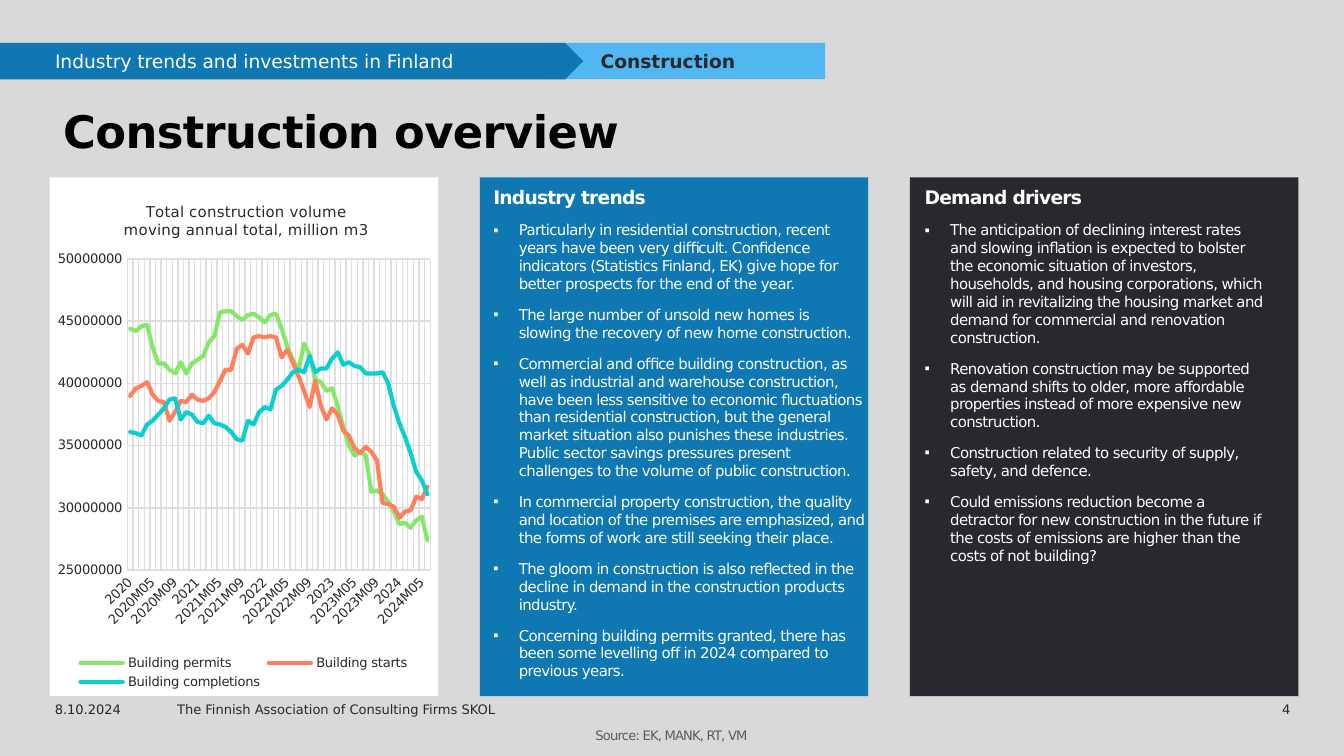
"""Build the construction overview slide with its volume chart and two text panels."""
from dataclasses import dataclass

from lxml import etree
from pptx import Presentation
from pptx import util as u
from pptx.chart.data import CategoryChartData
from pptx.dml.color import RGBColor
from pptx.enum import chart as ch, shapes, text
from pptx.oxml import parse_xml
from pptx.oxml.ns import nsdecls, qn

FONT = "DejaVu Sans"
COLORS = {
    "backdrop": "D9D9D9", "dark": "29282E", "blue": "0F78B2", "sky": "50B7F0",
    "white": "FFFFFF", "black": "000000", "muted": "5C5967", "grid": "DEDDE1",
    "permits": "85E869", "starts": "FF805C", "completions": "0ACFCF",
}
PANEL_LEFT, PANEL_STEP, PANEL_TOP = 0.37, 3.2, 1.32
PANEL_WIDTH, PANEL_HEIGHT = 2.89, 3.86
VOLUME_UNIT = 100_000


@dataclass(frozen=True)
class Box:
    left: float
    top: float
    width: float
    height: float

    def lengths(self) -> tuple:
        return tuple(u.Inches(v) for v in (self.left, self.top, self.width, self.height))


@dataclass(frozen=True)
class Panel:
    heading: str
    points: tuple[str, ...]
    box: Box


@dataclass(frozen=True)
class Volume:
    name: str
    color: str
    values: tuple[int, ...]


@dataclass(frozen=True)
class Note:
    wording: str
    box: Box
    align: text.PP_ALIGN = text.PP_ALIGN.LEFT
    color: str = "dark"
    inset: float = 0.05
    spacing: int = 0


PANELS = (
    Panel("Industry trends", (
        "Particularly in residential construction, recent years have been very difficult. Confidence indicators (Statistics Finland, EK) give hope for better prospects for the end of the year.",
        "The large number of unsold new homes is slowing the recovery of new home construction.",
        "Commercial and office building construction, as well as industrial and warehouse construction, have been less sensitive to economic fluctuations than residential construction, but the general market situation also punishes these industries. Public sector savings pressures present challenges to the volume of public construction.",
        "In commercial property construction, the quality and location of the premises are emphasized, and the forms of work are still seeking their place.",
        "The gloom in construction is also reflected in the decline in demand in the construction products industry.",
        "Concerning building permits granted, there has been some levelling off in 2024 compared to previous years.",
    ), Box(3.57, 1.33, 2.97, 1.94)),
    Panel("Demand drivers", (
        "The anticipation of declining interest rates and slowing inflation is expected to bolster the economic situation of investors, households, and housing corporations, which will aid in revitalizing the housing market and demand for commercial and renovation construction.",
        "Renovation construction may be supported as demand shifts to older, more affordable properties instead of more expensive new construction.",
        "Construction related to security of supply, safety, and defence.",
        "Could emissions reduction become a detractor for new construction in the future if the costs of emissions are higher than the costs of not building?",
    ), Box(6.78, 1.33, 2.76, 1.94)),
)
VOLUMES = (
    Volume("Building permits", "permits", (
        444, 442, 446, 447, 429, 416, 416, 411, 408, 417, 408, 416, 419, 422, 433, 438, 457, 458,
        458, 454, 451, 455, 456, 453, 449, 455, 456, 444, 430, 419, 410, 432, 423, 403, 401, 394,
        396, 382, 365, 350, 342, 345, 342, 313, 314, 311, 305, 297, 287, 288, 284, 290, 293, 274)),
    Volume("Building starts", "starts", (
        390, 396, 398, 401, 391, 386, 385, 370, 377, 386, 385, 391, 387, 386, 388, 393, 402, 411,
        411, 428, 431, 424, 437, 438, 437, 438, 437, 421, 427, 417, 406, 394, 381, 402, 382, 371,
        380, 375, 362, 358, 348, 344, 349, 345, 338, 304, 303, 301, 292, 297, 298, 309, 307, 317)),
    Volume("Building completions", "completions", (
        361, 360, 358, 367, 370, 375, 380, 387, 388, 371, 377, 375, 369, 368, 374, 368, 367, 365,
        361, 355, 354, 370, 367, 377, 381, 379, 395, 398, 403, 409, 411, 409, 422, 409, 412, 412,
        420, 425, 415, 417, 414, 413, 408, 408, 408, 409, 400, 382, 368, 357, 344, 329, 322, 311)),
)
NOTES = (
    Note("8.10.2024", Box(0.31, 5.17, 1, 0.18)),
    Note("The Finnish Association of Consulting Firms SKOL", Box(1.22, 5.17, 3.6, 0.18)),
    Note("4", Box(8.76, 5.17, 0.94, 0.18), text.PP_ALIGN.RIGHT),
    Note("Source: EK, MANK, RT, VM", Box(0.37, 5.37, 9.25, 0.2),
         text.PP_ALIGN.CENTER, "muted", 0.04, -40),
)


def rgb(name: str) -> RGBColor:
    return RGBColor.from_string(COLORS[name])


def set_font(font, size: float, color: str, bold: bool = False) -> None:
    font.name, font.size, font.bold = FONT, u.Pt(size), bold
    font.color.rgb = rgb(color)


def set_spacing(paragraph, hundredths: int) -> None:
    for run in paragraph.runs:
        run._r.get_or_add_rPr().set("spc", str(hundredths))


def add_block(slide, kind, box: Box, color: str):
    block = slide.shapes.add_shape(kind, *box.lengths())
    block.shadow.inherit = False
    block.fill.solid()
    block.fill.fore_color.rgb = rgb(color)
    block.line.fill.background()
    return block


def add_banner(slide, kind, box: Box, fill: str, label: str, color: str, bold: bool) -> None:
    frame = add_block(slide, kind, box, fill).text_frame
    frame.vertical_anchor = text.MSO_ANCHOR.MIDDLE
    frame.margin_left = u.Inches(0.41)
    frame.word_wrap = True
    frame.text = label
    frame.paragraphs[0].alignment = text.PP_ALIGN.LEFT
    set_font(frame.paragraphs[0].font, 10, color, bold)


def place(holder, box: Box):
    """Move a placeholder to its box, in front of the shapes drawn so far."""
    holder.left, holder.top, holder.width, holder.height = box.lengths()
    holder.element.getparent().append(holder.element)
    frame = holder.text_frame
    frame.word_wrap = True
    frame.auto_size = text.MSO_AUTO_SIZE.NONE
    frame.vertical_anchor = text.MSO_ANCHOR.TOP
    return frame


def fill_title(holder, wording: str) -> None:
    frame = place(holder, Box(0.37, 0.75, 8.27, 0.4))
    frame.text = wording
    paragraph = frame.paragraphs[0]
    paragraph.alignment = text.PP_ALIGN.LEFT
    paragraph.line_spacing, paragraph.space_before = u.Pt(27), u.Pt(0)
    set_font(paragraph.font, 24, "black", True)
    set_spacing(paragraph, -34)


def fill_panel(holder, panel: Panel) -> None:
    frame = place(holder, panel.box)
    frame.text = "\n".join((panel.heading, *panel.points))
    for index, paragraph in enumerate(frame.paragraphs):
        is_point = index > 0
        indent = u.Inches(0.19) if is_point else 0
        paragraph.space_before, paragraph.space_after = u.Pt(4 if is_point else 0), u.Pt(3)
        properties = paragraph._p.get_or_add_pPr()
        properties.set("marL", str(indent))
        properties.set("indent", str(-indent))
        if is_point:
            etree.SubElement(properties, qn("a:buChar")).set("char", "▪")
        else:
            etree.SubElement(properties, qn("a:buNone"))
        set_font(paragraph.font, 8 if is_point else 10, "white", not is_point)
        set_spacing(paragraph, -35 if is_point else -40)


def add_note(slide, note: Note) -> None:
    frame = slide.shapes.add_textbox(*note.box.lengths()).text_frame
    frame.word_wrap = True
    frame.margin_top = frame.margin_bottom = u.Inches(note.inset)
    frame.text = note.wording
    frame.paragraphs[0].alignment = note.align
    set_font(frame.paragraphs[0].font, 7, note.color)
    set_spacing(frame.paragraphs[0], note.spacing)


def manual_layout(inner: bool = False, **edges: float):
    target = '<c:layoutTarget val="inner"/>' if inner else ""
    modes = "".join(f'<c:{axis}Mode val="edge"/>' for axis in "xy")
    values = "".join(f'<c:{edge} val="{value}"/>' for edge, value in edges.items())
    return parse_xml(f'<c:layout {nsdecls("c")}><c:manualLayout>{target}{modes}{values}'
                     '</c:manualLayout></c:layout>')


def replace_layout(parent, layout, position: int) -> None:
    for old in parent.findall(qn("c:layout")):
        parent.remove(old)
    parent.insert(position, layout)


def add_volume_chart(slide) -> None:
    data = CategoryChartData(number_format="0")
    months = [(year, month) for year in range(2020, 2025) for month in range(1, 13)]
    data.categories = [str(year) if month == 1 else f"{year}M{month:02}"
                       for year, month in months[:len(VOLUMES[0].values)]]
    for volume in VOLUMES:
        data.add_series(volume.name, [value * VOLUME_UNIT for value in volume.values])
    box = Box(PANEL_LEFT, 1.31, PANEL_WIDTH, PANEL_HEIGHT)
    chart = slide.shapes.add_chart(ch.XL_CHART_TYPE.LINE, *box.lengths(), data).chart
    set_font(chart.font, 10, "dark")
    chart.plots[0].vary_by_categories = False

    title = chart.chart_title
    title.text_frame.text = "Total construction volume\nmoving annual total, million m3"
    for paragraph in title.text_frame.paragraphs:
        set_font(paragraph.font, 8, "dark")
    title.include_in_layout = False
    replace_layout(title._element, manual_layout(x=0.18, y=0.04), 1)
    replace_layout(chart._chartSpace.chart.plotArea,
                   manual_layout(inner=True, x=0.2, y=0.16, w=0.78, h=0.6), 0)

    for axis in (chart.category_axis, chart.value_axis):
        axis.major_tick_mark = axis.minor_tick_mark = ch.XL_TICK_MARK.NONE
        axis.has_major_gridlines = True
        for line in (axis.major_gridlines.format.line, axis.format.line):
            line.color.rgb = rgb("grid")
            line.width = u.Pt(0.75)
        set_font(axis.tick_labels.font, 7, "dark")
    chart.category_axis._element.find(qn("c:txPr")).find(qn("a:bodyPr")).set("rot", "-2700000")
    values = chart.value_axis
    values.format.line.fill.background()
    values.minimum_scale, values.maximum_scale, values.major_unit = 25e6, 50e6, 5e6
    values.tick_labels.number_format, values.tick_labels.number_format_is_linked = "0", False

    chart.has_legend = True
    chart.legend.position = ch.XL_LEGEND_POSITION.BOTTOM
    chart.legend.include_in_layout = False
    set_font(chart.legend.font, 7, "dark")
    for series, volume in zip(chart.plots[0].series, VOLUMES):
        series.smooth = False
        series.marker.style = ch.XL_MARKER_STYLE.NONE
        series.format.line.color.rgb = rgb(volume.color)
        series.format.line.width = u.Pt(2.25)
        series._element.spPr.find(qn("a:ln")).set("cap", "rnd")


def main() -> None:
    deck = Presentation()
    deck.slide_width, deck.slide_height = u.Inches(10), u.Inches(10 * 9 / 16)
    slide = deck.slides.add_slide(deck.slide_layouts[3])
    slide.background.fill.solid()
    slide.background.fill.fore_color.rgb = rgb("backdrop")
    title, *bodies = list(slide.placeholders)[:3]

    for column, color in enumerate(("white", "blue", "dark")):
        left = PANEL_LEFT + column * PANEL_STEP
        add_block(slide, shapes.MSO_SHAPE.RECTANGLE,
                  Box(left, PANEL_TOP, PANEL_WIDTH, PANEL_HEIGHT), color)
    add_banner(slide, shapes.MSO_SHAPE.RECTANGLE, Box(4.06, 0.32, 2.08, 0.27),
               "sky", "Construction", "dark", True)
    add_banner(slide, shapes.MSO_SHAPE.PENTAGON, Box(0, 0.32, 4.34, 0.27),
               "blue", "Industry trends and investments in Finland", "white", False)
    fill_title(title, "Construction overview")
    for holder, panel in zip(bodies, PANELS):
        fill_panel(holder, panel)
    add_volume_chart(slide)
    for note in NOTES:
        add_note(slide, note)
    deck.save("out.pptx")


if __name__ == "__main__":
    main()
